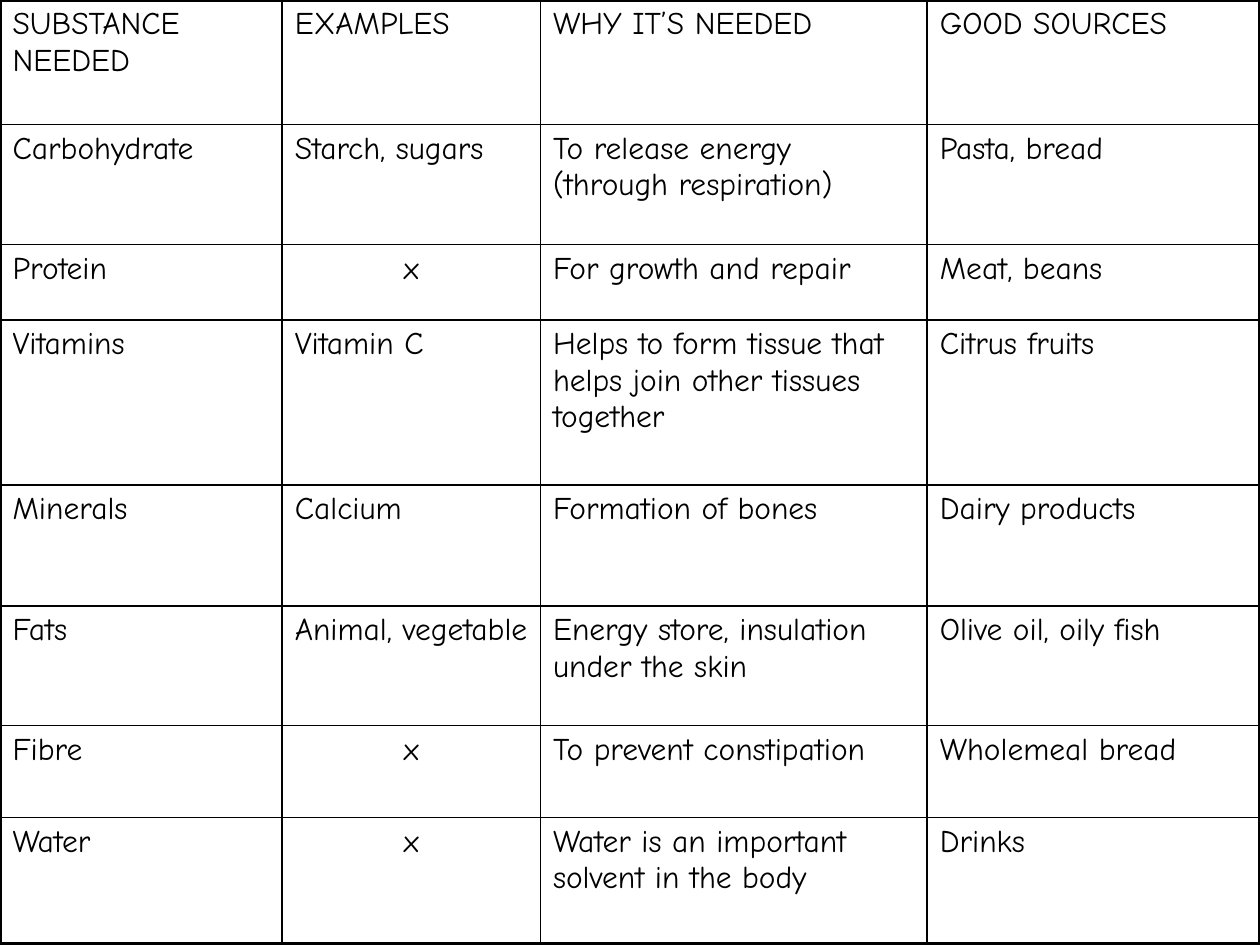
from lxml.etree import SubElement as Sub
from pptx import Presentation as Deck
from pptx.dml.color import RGBColor as Color
from pptx.enum.text import PP_ALIGN as Align
from pptx.oxml.ns import qn
from pptx.util import Inches, Pt

INK = "000000"
FONT = {"name": "Comic Neue", "size": Pt(18), "bold": False}
THIN, THICK = 1, 2.25
COLS = [2.24, 2.05, 3.07, 2.64]
ROWS = [0.99, 0.95, 0.6, 1.31, 0.96, 0.95, 0.73, 1]
FOODS = [
    ["SUBSTANCE NEEDED", "EXAMPLES", "WHY IT’S NEEDED", "GOOD SOURCES"],
    ["Carbohydrate", "Starch, sugars",
     "To release energy (through respiration)", "Pasta, bread"],
    ["Protein", "x", "For growth and repair", "Meat, beans"],
    ["Vitamins", "Vitamin C",
     "Helps to form tissue that helps join other tissues together",
     "Citrus fruits"],
    ["Minerals", "Calcium", "Formation of bones", "Dairy products"],
    ["Fats", "Animal, vegetable",
     "Energy store, insulation under the skin", "Olive oil, oily fish"],
    ["Fibre", "x", "To prevent constipation", "Wholemeal bread"],
    ["Water", "x", "Water is an important solvent in the body", "Drinks"],
]


def tint(fmt, code):
    fmt.rgb = Color.from_string(code)


def style(item, look):
    for key, val in look.items():
        setattr(item, key, val)


def edge(cell, side, width):
    line = Sub(cell._tc.get_or_add_tcPr(), qn(f"a:ln{side}"), w=str(Pt(width)))
    fill = Sub(line, qn("a:solidFill"))
    Sub(fill, qn("a:srgbClr"), val=INK)


def frame(cell, row, col):
    outer = {
        "L": col == 0,
        "R": col == len(COLS) - 1,
        "T": row == 0,
        "B": row == len(ROWS) - 1,
    }
    for side, rim in outer.items():
        edge(cell, side, THICK if rim else THIN)
    cell.fill.background()


def write(cell, text):
    cell.text = text
    para = cell.text_frame.paragraphs[0]
    para.alignment = Align.CENTER if text == "x" else Align.LEFT
    font = para.runs[0].font
    style(font, FONT)
    tint(font.color, INK)


def grid(slide, deck):
    table = slide.shapes.add_table(
        len(ROWS), len(COLS), 0, 0, deck.slide_width, deck.slide_height
    ).table
    style(table, {"first_row": False, "horz_banding": False})
    for col, width in zip(table.columns, COLS):
        col.width = Inches(width)
    for row, height in zip(table.rows, ROWS):
        row.height = Inches(height)
    for r, texts in enumerate(FOODS):
        for c, text in enumerate(texts):
            cell = table.cell(r, c)
            write(cell, text)
            frame(cell, r, c)


def main():
    deck = Deck()
    style(deck, {"slide_width": Inches(10), "slide_height": Inches(7.5)})
    slide = deck.slides.add_slide(deck.slide_layouts[6])
    grid(slide, deck)
    deck.save("out.pptx")


if __name__ == "__main__":
    main()
